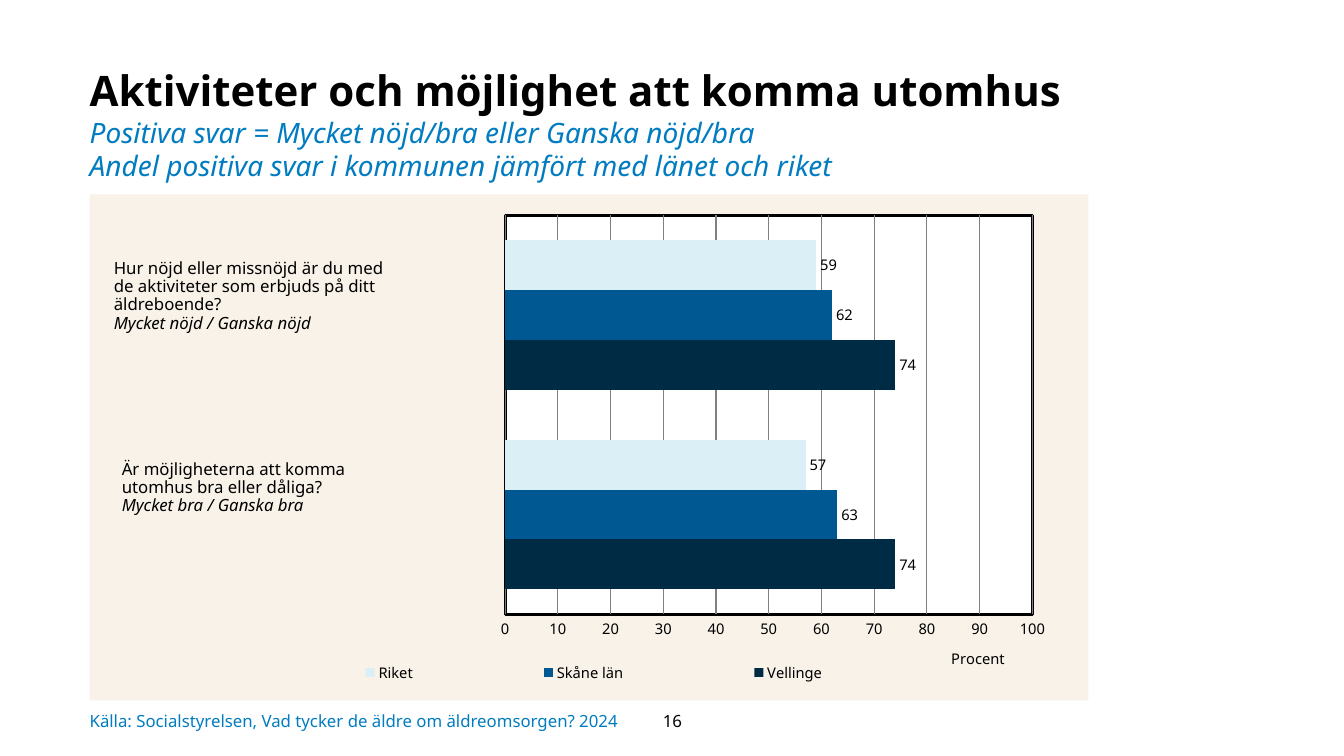
from dataclasses import dataclass

from lxml import etree
from pptx import Presentation
from pptx.chart.chart import Chart
from pptx.chart.data import CategoryChartData
from pptx.dml.color import RGBColor
from pptx.enum.chart import XL_CHART_TYPE, XL_LABEL_POSITION, XL_LEGEND_POSITION, XL_TICK_MARK
from pptx.enum.text import MSO_ANCHOR, MSO_AUTO_SIZE, PP_ALIGN
from pptx.oxml import parse_xml
from pptx.oxml.ns import nsdecls, qn
from pptx.slide import Slide
from pptx.util import Cm, Pt

BAR_CLUSTERED = XL_CHART_TYPE.BAR_CLUSTERED
OUTSIDE_END = XL_LABEL_POSITION.OUTSIDE_END
LEGEND_BOTTOM = XL_LEGEND_POSITION.BOTTOM
NO_TICK = XL_TICK_MARK.NONE
TOP, MIDDLE = MSO_ANCHOR.TOP, MSO_ANCHOR.MIDDLE
GROW, FIXED = MSO_AUTO_SIZE.SHAPE_TO_FIT_TEXT, MSO_AUTO_SIZE.NONE
LEFT, CENTER = PP_ALIGN.LEFT, PP_ALIGN.CENTER

FONT = "Noto Sans"
BLACK = RGBColor(0x00, 0x00, 0x00)
WHITE = RGBColor(0xFF, 0xFF, 0xFF)
GRAY = RGBColor(0x80, 0x80, 0x80)
CREAM = RGBColor(0xF8, 0xF2, 0xE8)
SKY = RGBColor(0x01, 0x7C, 0xC1)
NAVY = RGBColor(0x00, 0x2B, 0x45)
BLUE = RGBColor(0x00, 0x58, 0x92)
PALE = RGBColor(0xDB, 0xF0, 0xF6)


@dataclass
class Area:
    name: str
    values: tuple[int, int]
    color: RGBColor


@dataclass
class Question:
    left: float
    top: float
    height: float
    wording: str
    answers: str


@dataclass
class FooterItem:
    left: float
    width: float
    wording: str
    color: RGBColor
    align: PP_ALIGN
    inset: float


AREAS = [
    Area("Vellinge", (74, 74), NAVY),
    Area("Skåne län", (63, 62), BLUE),
    Area("Riket", (57, 59), PALE),
]
QUESTIONS = [
    Question(2.62, 6.43, 2.77,
             "Hur nöjd eller missnöjd är du med de aktiviteter som erbjuds på ditt äldreboende?",
             "Mycket nöjd / Ganska nöjd"),
    Question(2.82, 11.48, 2.24,
             "Är möjligheterna att komma utomhus bra eller dåliga?",
             "Mycket bra / Ganska bra"),
]
FOOTER = [
    FooterItem(2.26, 22.78, "Källa: Socialstyrelsen, Vad tycker de äldre om äldreomsorgen? 2024",
               SKY, LEFT, 0),
    FooterItem(15.65, 2.59, "16", BLACK, CENTER, 0.25),
]
HEADING = "\v".join([
    "Aktiviteter och möjlighet att komma utomhus",
    "Positiva svar = Mycket nöjd/bra eller Ganska nöjd/bra",
    "Andel positiva svar i kommunen jämfört med länet och riket",
])


def style_font(font, size: float, color: RGBColor, italic: bool = False) -> None:
    font.name = FONT
    font.size = Pt(size)
    font.color.rgb = color
    font.italic = italic


def add_heading(page: Slide) -> None:
    title = page.shapes.title
    title.left, title.top, title.width, title.height = Cm(2.26), Cm(1.65), Cm(25.83), Cm(3.28)
    frame = title.text_frame
    frame.text = HEADING
    frame.word_wrap = True
    frame.auto_size = FIXED
    frame.vertical_anchor = TOP
    frame.margin_left = 0
    frame.margin_top = Cm(0.05)
    para = frame.paragraphs[0]
    para.alignment = LEFT
    para.line_spacing = 0.98
    heading, *subtitles = para.runs
    style_font(heading.font, 30, BLACK)
    heading.font.bold = True
    for span in subtitles:
        style_font(span.font, 20, SKY, italic=True)
        span.font.bold = False
    for line_break in para._p.findall(qn("a:br")):
        etree.SubElement(line_break, qn("a:rPr"), sz="1600")


def place(parent, after: str | None, mode: str, **fractions: float) -> None:
    for old_layout in parent.findall(qn("c:layout")):
        parent.remove(old_layout)
    layout = etree.Element(qn("c:layout"))
    manual = etree.SubElement(layout, qn("c:manualLayout"))
    if mode:
        etree.SubElement(manual, qn("c:layoutTarget"), val=mode)
    for edge in ("xMode", "yMode"):
        etree.SubElement(manual, qn(f"c:{edge}"), val="edge")
    for key, fraction in fractions.items():
        etree.SubElement(manual, qn(f"c:{key}"), val=str(fraction))
    if after:
        parent.find(qn(after)).addnext(layout)
    else:
        parent.insert(0, layout)


def area_style(fill: RGBColor, line: str):
    return parse_xml(
        f'<c:spPr {nsdecls("c", "a")}><a:solidFill><a:srgbClr val="{fill}"/></a:solidFill>{line}</c:spPr>'
    )


def style_value_axis(chart: Chart) -> None:
    axis = chart.value_axis
    axis.minimum_scale, axis.maximum_scale, axis.major_unit = 0, 100, 10
    axis.major_tick_mark = axis.minor_tick_mark = NO_TICK
    axis.format.line.fill.background()
    axis.has_major_gridlines = True
    axis.major_gridlines.format.line.color.rgb = GRAY
    axis.major_gridlines.format.line.width = Pt(0.75)
    axis.axis_title.text_frame.text = "Procent"
    span = axis.axis_title.text_frame.paragraphs[0].runs[0]
    style_font(span.font, 10.5, BLACK)
    span.font.bold = False
    place(axis.axis_title._element, "c:tx", "", x=0.86, y=0.89)


def add_bars(page: Slide) -> None:
    data = CategoryChartData()
    data.categories = ["1", "2"]
    for area in AREAS:
        data.add_series(area.name, area.values)
    chart = page.shapes.add_chart(
        BAR_CLUSTERED, Cm(2.26), Cm(4.9), Cm(25.17), Cm(12.75), data
    ).chart
    chart.has_title = False
    style_font(chart.font, 10.5, BLACK)
    plot = chart.plots[0]
    plot.gap_width = 100
    plot.vary_by_categories = False
    plot.has_data_labels = True
    plot.data_labels.show_value = True
    plot.data_labels.position = OUTSIDE_END
    style_font(plot.data_labels.font, 10.5, BLACK)
    for series, area in zip(plot.series, AREAS):
        series.format.fill.solid()
        series.format.fill.fore_color.rgb = area.color
    chart.category_axis.visible = False
    style_value_axis(chart)
    chart.has_legend = True
    chart.legend.position = LEGEND_BOTTOM
    chart.legend.include_in_layout = False
    place(chart.legend._element, "c:legendPos", "", x=0.15, y=0.915, w=0.71, h=0.06)
    body = chart._chartSpace.find(qn("c:chart"))
    plot_area = body.find(qn("c:plotArea"))
    place(plot_area, None, "inner", x=0.416, y=0.041, w=0.528, h=0.789)
    border = f'<a:ln w="{Pt(2)}"><a:solidFill><a:srgbClr val="{BLACK}"/></a:solidFill></a:ln>'
    plot_area.append(area_style(WHITE, border))
    body.addnext(area_style(CREAM, "<a:ln><a:noFill/></a:ln>"))


def add_question(page: Slide, question: Question) -> None:
    box = page.shapes.add_textbox(
        Cm(question.left), Cm(question.top), Cm(7.62), Cm(question.height)
    )
    frame = box.text_frame
    frame.word_wrap = True
    frame.auto_size = GROW
    frame.text = f"{question.wording}\n{question.answers}"
    for para, italic in zip(frame.paragraphs, (False, True)):
        para.line_spacing = 0.9
        style_font(para.runs[0].font, 12, BLACK, italic)


def add_footer_item(page: Slide, item: FooterItem) -> None:
    box = page.shapes.add_textbox(Cm(item.left), Cm(17.65), Cm(item.width), Cm(1.02))
    frame = box.text_frame
    frame.word_wrap = True
    frame.vertical_anchor = MIDDLE
    frame.margin_left = frame.margin_right = Cm(item.inset)
    frame.margin_top = frame.margin_bottom = 0
    frame.text = item.wording
    para = frame.paragraphs[0]
    para.alignment = item.align
    style_font(para.runs[0].font, 12, item.color)


def main() -> None:
    deck = Presentation()
    deck.slide_width, deck.slide_height = Cm(33.87), Cm(19.05)
    page = deck.slides.add_slide(deck.slide_layouts[5])
    add_heading(page)
    add_bars(page)
    for question in QUESTIONS:
        add_question(page, question)
    for item in FOOTER:
        add_footer_item(page, item)
    deck.save("out.pptx")


if __name__ == "__main__":
    main()
